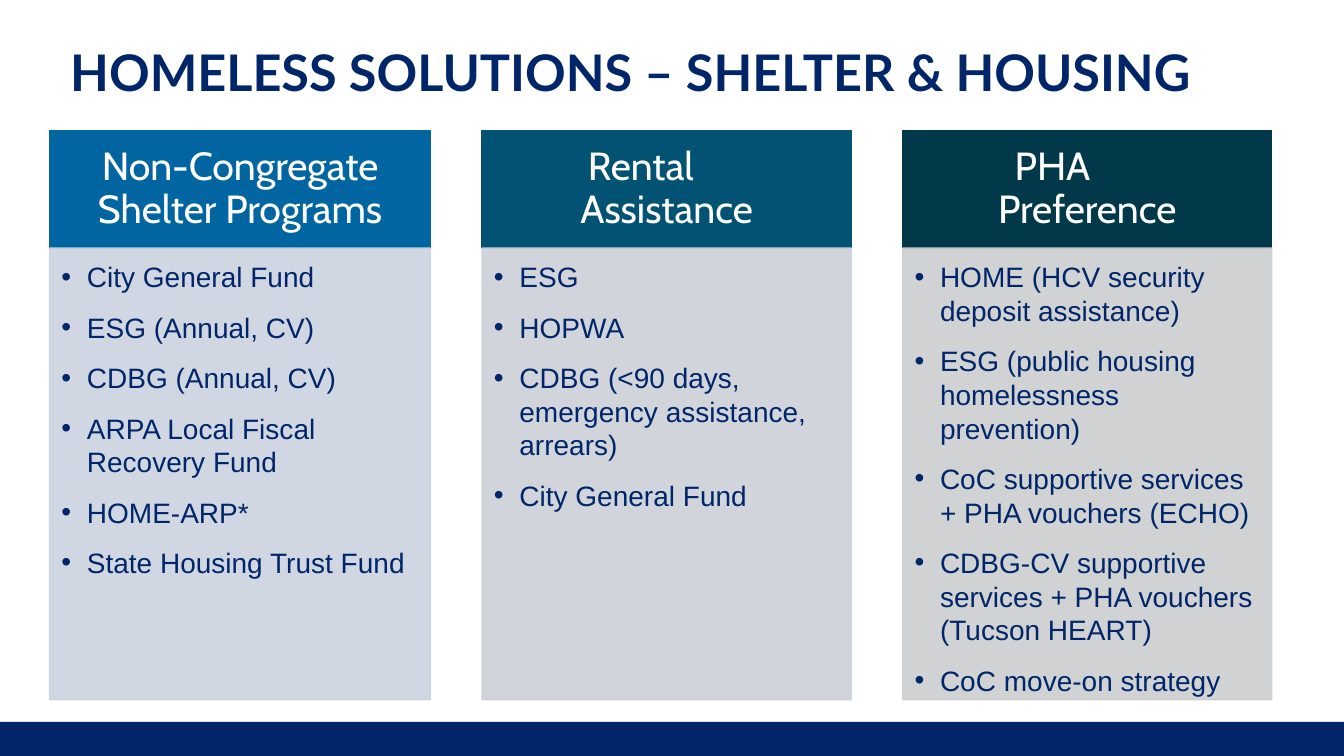
from lxml import etree
from pptx import Presentation
from pptx import util as u
from pptx.dml.color import RGBColor
from pptx.enum import shapes, text
from pptx.oxml.ns import qn

TITLE = "HOMELESS SOLUTIONS – SHELTER & HOUSING"
# Heading lines are (text, right indent in cm)
PROGRAMS = [
    dict(heading=[("Non-Congregate Shelter Programs", 0)], width=9.6,
         dark="0065A0", light="CCD3DF",
         funds=["City General Fund", "ESG (Annual, CV)", "CDBG (Annual, CV)",
                "ARPA Local Fiscal Recovery Fund", "HOME-ARP*",
                "State Housing Trust Fund"]),
    dict(heading=[("Rental", 1.3), ("Assistance", 0)], width=9.3,
         dark="025274", light="CCD1D8",
         funds=["ESG", "HOPWA",
                "CDBG (<90 days, emergency assistance, arrears)",
                "City General Fund"]),
    dict(heading=[("PHA", 1.75), ("Preference", 0)], width=9.3,
         dark="02394A", light="CCCECF",
         funds=["HOME (HCV security deposit assistance)",
                "ESG (public housing homelessness prevention)",
                "CoC supportive services + PHA vouchers (ECHO)",
                "CDBG-CV supportive services + PHA vouchers (Tucson HEART)",
                "CoC move-on strategy"]),
]


class Theme:
    navy, white = "002669", "FFFFFF"
    title = dict(name="Lato", size=u.Pt(36), bold=True)
    heading = dict(name="Cabin", size=u.Pt(28))
    fund = dict(name="Arial", size=u.Pt(20))
    card_opacity = 90


SLIDE_W, SLIDE_H = 33.87, 19.05
FOOTER_H = 0.86
LEFT, TOP, GAP = 1.25, 3.29, 1.3
HEADING_H, CARD_H = 2.96, 11.38
INDENT = u.Cm(0.64)


def assign(target, values):
    for key, value in values.items():
        setattr(target, key, value)


def set_font(paragraph, style, color):
    assign(paragraph.font, style)
    paragraph.font.color.rgb = RGBColor.from_string(color)


def set_frame(frame, insets, anchor):
    sides = ("margin_left", "margin_top", "margin_right", "margin_bottom")
    assign(frame, dict(zip(sides, map(u.Cm, insets))))
    assign(frame, dict(word_wrap=True, vertical_anchor=anchor,
                       auto_size=text.MSO_AUTO_SIZE.NONE))


def add_block(slide, box, color, opacity=100):
    block = slide.shapes.add_shape(shapes.MSO_SHAPE.RECTANGLE, *map(u.Cm, box))
    block.shadow.inherit = False
    block.fill.solid()
    block.line.fill.solid()
    block.line.width = u.Pt(1)
    for paint in (block.fill, block.line.fill):
        paint.fore_color.rgb = RGBColor.from_string(color)
    if opacity < 100:
        for tint in block.fill._xPr.iter(qn("a:srgbClr")):
            etree.SubElement(tint, qn("a:alpha"), val=str(opacity * 1000))
    return block


def write_lines(frame, lines):
    """Yield a paragraph and its line, reusing the first paragraph."""
    for number, line in enumerate(lines):
        yield frame.add_paragraph() if number else frame.paragraphs[0], line


def add_heading(slide, box, program):
    frame = add_block(slide, box, program["dark"]).text_frame
    set_frame(frame, (0.56, 0.3, 0.56, 0.3), text.MSO_ANCHOR.MIDDLE)
    for paragraph, (line, right) in write_lines(frame, program["heading"]):
        paragraph.text = line
        assign(paragraph, dict(alignment=text.PP_ALIGN.CENTER, line_spacing=0.9))
        paragraph._p.get_or_add_pPr().set("marR", str(u.Cm(right)))
        set_font(paragraph, Theme.heading, Theme.white)


def add_funds(slide, box, program):
    frame = add_block(slide, box, program["light"], Theme.card_opacity).text_frame
    set_frame(frame, (0.3, 0.3, 0.41, 0.43), text.MSO_ANCHOR.TOP)
    for paragraph, fund in write_lines(frame, program["funds"]):
        paragraph.text = fund
        props = paragraph._p.get_or_add_pPr()
        props.set("marL", str(INDENT))
        props.set("indent", str(-INDENT))
        etree.SubElement(props, qn("a:buFont"), typeface="Arial")
        etree.SubElement(props, qn("a:buChar"), char="•")
        assign(paragraph, dict(alignment=text.PP_ALIGN.LEFT, line_spacing=1.0,
                               space_after=u.Pt(12)))
        set_font(paragraph, Theme.fund, Theme.navy)


def main():
    deck = Presentation()
    assign(deck, dict(slide_width=u.Cm(SLIDE_W), slide_height=u.Cm(SLIDE_H)))
    slide = deck.slides.add_slide(deck.slide_layouts[5])

    # Title
    title = slide.shapes.title
    assign(title, dict(left=u.Cm(1.52), top=u.Cm(1.07),
                       width=u.Cm(30.81), height=u.Cm(2)))
    set_frame(title.text_frame, (0.25, 0.13, 0.25, 0.13), text.MSO_ANCHOR.TOP)
    headline = title.text_frame.paragraphs[0]
    headline.text = TITLE
    assign(headline, dict(alignment=text.PP_ALIGN.LEFT, line_spacing=0.9))
    set_font(headline, Theme.title, Theme.navy)

    # Footer band
    footer = add_block(slide, (0, SLIDE_H - FOOTER_H, SLIDE_W, FOOTER_H), Theme.navy)
    footer.line.fill.background()

    # Program columns
    left = LEFT
    for program in PROGRAMS:
        width = program["width"]
        add_heading(slide, (left, TOP, width, HEADING_H), program)
        add_funds(slide, (left, TOP + HEADING_H, width, CARD_H), program)
        left += width + GAP

    deck.save("out.pptx")


if __name__ == "__main__":
    main()
